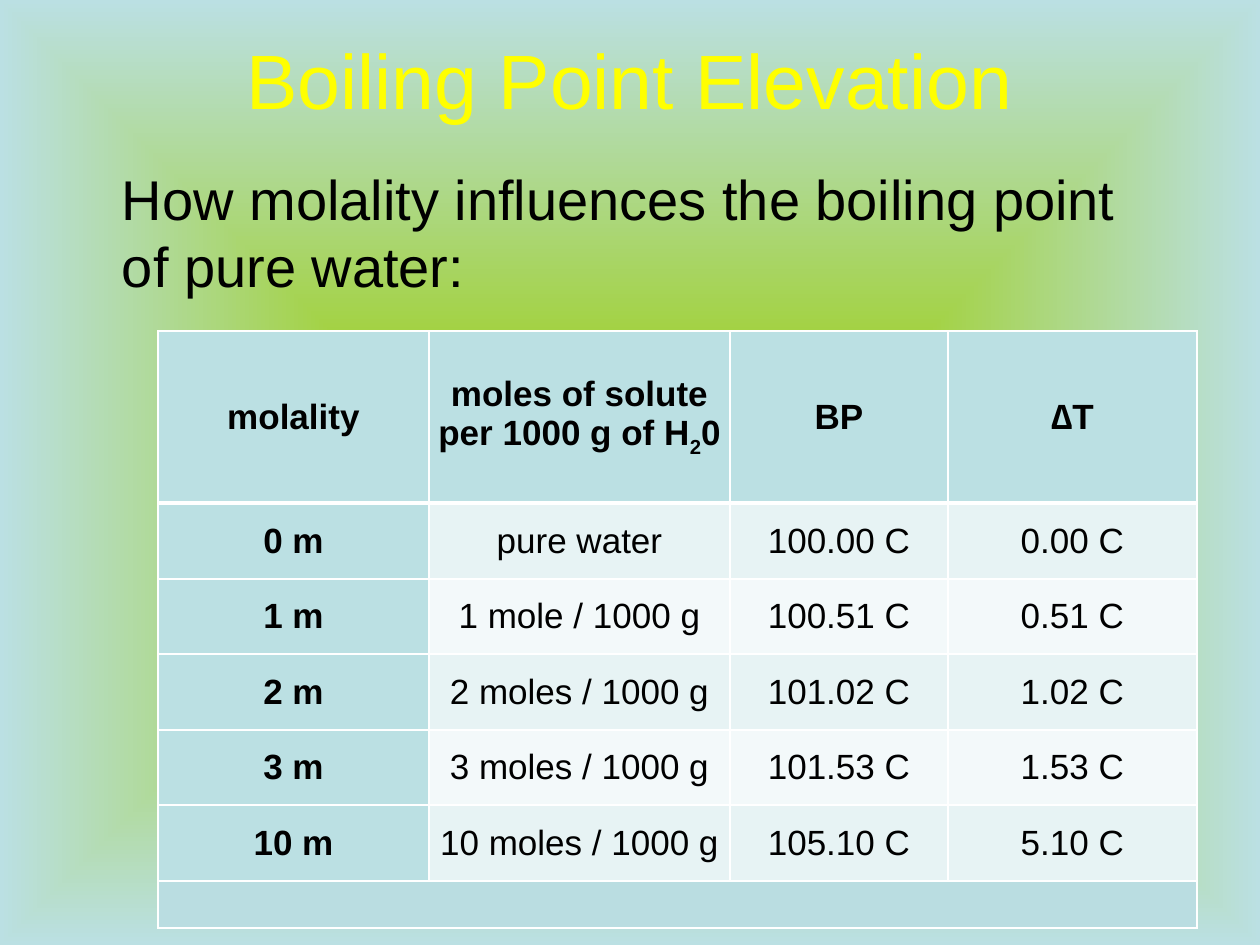
from pptx import Presentation
from pptx.dml.color import RGBColor
from pptx.enum.text import MSO_ANCHOR as Anchor, PP_ALIGN as Align
from pptx.oxml import parse_xml
from pptx.oxml.ns import nsdecls
from pptx.util import Pt

SCALE = 914400 / 126
COLORS = {
    "lime": "99CC00", "aqua": "BBE0E3", "title": "FFFF00", "text": "000000",
    "border": "FFFFFF", "odd": "E7F3F4", "even": "F3F9FA", "footer": "BADDE1",
}
HEADERS = ["molality", "moles of solute per 1000 g of H", "BP", "∆T"]
READINGS = [
    ("0 m", "pure water", "100.00 C", "0.00 C"),
    ("1 m", "1 mole / 1000 g", "100.51 C", "0.51 C"),
    ("2 m", "2 moles / 1000 g", "101.02 C", "1.02 C"),
    ("3 m", "3 moles / 1000 g", "101.53 C", "1.53 C"),
    ("10 m", "10 moles / 1000 g", "105.10 C", "5.10 C"),
]
COLUMN_WIDTHS = [271, 301, 218, 249]
ROW_HEIGHTS = [172, 76, 75, 76, 75, 76, 47]


def px(length):
    return round(length * SCALE)


def rgb(name):
    return RGBColor.from_string(COLORS[name])


def write(para, text, size=20, color="text", bold=False, align=Align.CENTER, baseline=0):
    para.alignment = align
    span = para.add_run()
    span.text = text
    span.font.name = "Arial"
    span.font.size = Pt(size)
    span.font.bold = bold
    span.font.color.rgb = rgb(color)
    if baseline:
        span.font._element.set("baseline", str(baseline))


def paint_background(page):
    page.element.cSld.insert(0, parse_xml(
        f'<p:bg {nsdecls("p", "a")}><p:bgPr><a:gradFill rotWithShape="1"><a:gsLst>'
        f'<a:gs pos="0"><a:srgbClr val="{COLORS["lime"]}"/></a:gs>'
        f'<a:gs pos="100000"><a:srgbClr val="{COLORS["aqua"]}"/></a:gs></a:gsLst>'
        '<a:path path="shape"><a:fillToRect l="50000" t="50000" r="50000" b="50000"/></a:path>'
        '</a:gradFill><a:effectLst/></p:bgPr></p:bg>'))


def add_text_frame(page, left, top, width, height, anchor):
    box = page.shapes.add_textbox(px(left), px(top), px(width), px(height))
    frame = box.text_frame
    frame.word_wrap = True
    frame.vertical_anchor = anchor
    return frame


def add_title(page, left, top, width, height):
    frame = add_text_frame(page, left, top, width, height, Anchor.MIDDLE)
    write(frame.paragraphs[0], "Boiling Point Elevation", size=44, color="title")


def add_intro(page, left, top, width, height):
    frame = add_text_frame(page, left, top, width, height, Anchor.TOP)
    frame.margin_left = px(59)
    para = frame.paragraphs[0]
    para.space_before = Pt(3)
    write(para, "How molality influences the boiling point of pure water:",
          size=32, align=Align.LEFT)


def style_cell(cell, fill, top=1, bottom=1):
    cell.margin_left = cell.margin_right = px(9)
    cell.margin_top = cell.margin_bottom = 0
    cell.vertical_anchor = Anchor.MIDDLE
    properties = cell._tc.get_or_add_tcPr()
    for side, weight in {"L": 1, "R": 1, "T": top, "B": bottom}.items():
        properties.append(parse_xml(
            f'<a:ln{side} {nsdecls("a")} w="{Pt(weight)}"><a:solidFill>'
            f'<a:srgbClr val="{COLORS["border"]}"/></a:solidFill></a:ln{side}>'))
    cell.fill.solid()
    cell.fill.fore_color.rgb = rgb(fill)


def add_readings_table(page, left, top, width, height):
    table = page.shapes.add_table(len(ROW_HEIGHTS), len(COLUMN_WIDTHS),
                                  px(left), px(top), px(width), px(height)).table
    table.horz_banding = False
    for column, column_width in zip(table.columns, COLUMN_WIDTHS):
        column.width = px(column_width)
    for row, row_height in zip(table.rows, ROW_HEIGHTS):
        row.height = px(row_height)

    for r, values in enumerate([HEADERS, *READINGS]):
        for c, value in enumerate(values):
            cell = table.cell(r, c)
            heading = r == 0 or c == 0
            fill = "aqua" if heading else "odd" if r % 2 else "even"
            style_cell(cell, fill, top=3 if r == 1 else 1, bottom=3 if r == 0 else 1)
            write(cell.text_frame.paragraphs[0], value, bold=heading)
    formula = table.cell(0, 1).text_frame.paragraphs[0]
    write(formula, "2", bold=True, baseline=-25000)
    write(formula, "0", bold=True)

    last = len(ROW_HEIGHTS) - 1
    for c in range(len(COLUMN_WIDTHS)):
        style_cell(table.cell(last, c), "footer")
    table.cell(last, 0).merge(table.cell(last, len(COLUMN_WIDTHS) - 1))


def main():
    deck = Presentation()
    deck.slide_width, deck.slide_height = px(1260), px(945)
    page = deck.slides.add_slide(deck.slide_layouts[6])
    paint_background(page)
    add_title(page, 63, 0, 1134, 158)
    add_intro(page, 63, 158, 1124, 158)
    add_readings_table(page, 158, 331, sum(COLUMN_WIDTHS), sum(ROW_HEIGHTS))
    deck.save("out.pptx")


if __name__ == "__main__":
    main()
